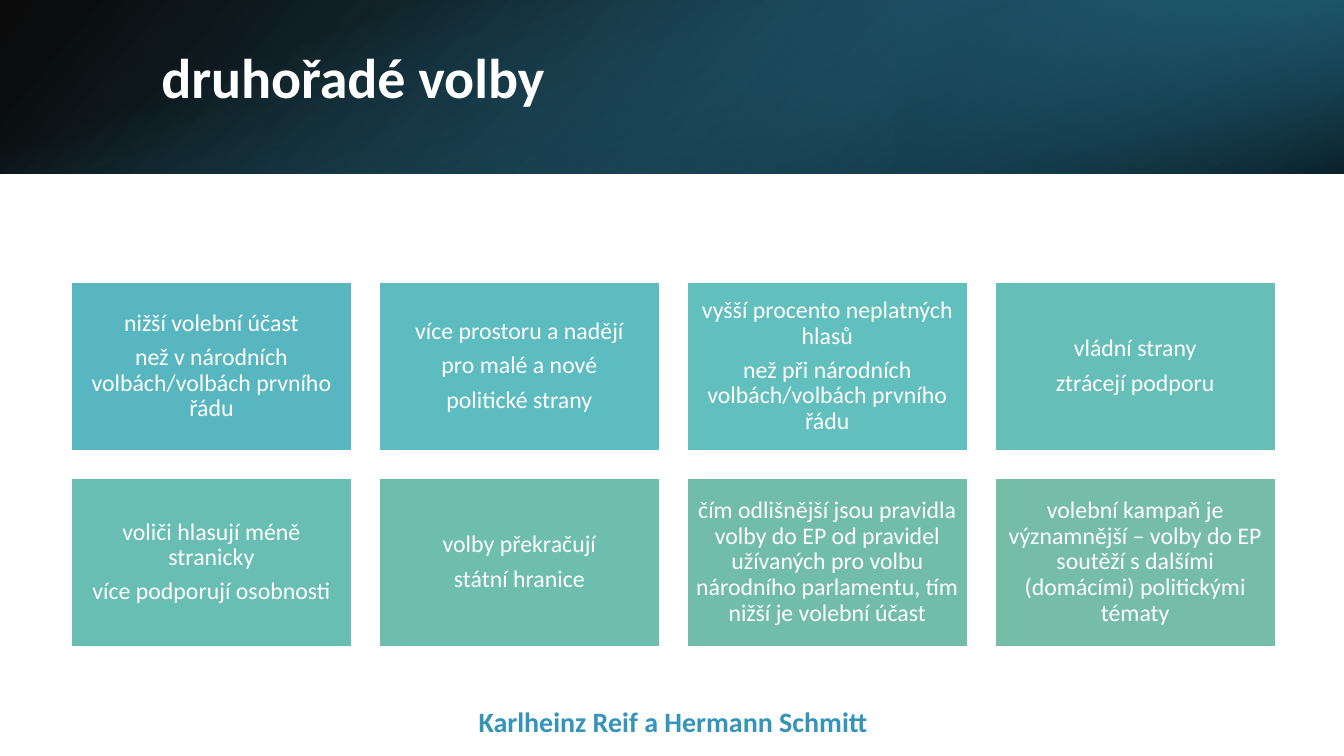
from dataclasses import dataclass

from lxml.etree import SubElement
from pptx import Presentation
from pptx.dml.color import RGBColor
from pptx.enum.shapes import MSO_SHAPE
from pptx.enum.text import MSO_ANCHOR, MSO_AUTO_SIZE, PP_ALIGN
from pptx.oxml.ns import qn
from pptx.shapes.autoshape import Shape
from pptx.slide import Slide
from pptx.util import Cm, Pt


@dataclass(frozen=True)
class Theme:
    """Colours, font and type sizes of the slide."""
    font: str = "Calibri"
    white: str = "FFFFFF"
    black: str = "000000"
    blue: str = "3494BA"
    steel: str = "276F8B"
    navy: str = "1A4A5D"
    title: int = 40
    card: int = 17
    credit: int = 20


@dataclass(frozen=True)
class Stop:
    """A gradient stop with position and opacity in percent."""
    place: int
    tint: str
    alpha: int


@dataclass(frozen=True)
class Band:
    """A gradient layer of the header, measured in centimetres."""
    left: float
    top: float
    width: float
    height: float
    turn: int
    flip: bool
    angle: int
    stops: tuple[Stop, Stop]


@dataclass(frozen=True)
class Card:
    """A coloured box with its lines of text."""
    fill: str
    lines: tuple[str, ...]


@dataclass(frozen=True)
class Grid:
    """The card grid, measured in centimetres."""
    left: float = 1.8
    top: float = 7.11
    width: float = 7.06
    height: float = 4.24
    gap: float = 0.7
    cols: int = 4
    inset: float = 0.18


THEME = Theme()
GRID = Grid()
WIDE, TALL, HEAD = 33.87, 19.05, 4.38
SIDE = (WIDE - HEAD) / 2

BANDS = (
    Band(0, 0, WIDE, HEAD, 0, True, 140,
         (Stop(0, THEME.black, 96), Stop(100, THEME.steel, 100))),
    Band(WIDE * 2 / 3, 0, WIDE / 3, HEAD, 180, True, 320,
         (Stop(19, THEME.navy, 68), Stop(100, THEME.blue, 79))),
    Band(SIDE, -SIDE, HEAD, WIDE, 90, False, 340,
         (Stop(23, THEME.blue, 0), Stop(99, THEME.black, 74))),
)

CARDS = (
    Card("58B6C0", ("nižší volební účast",
                    "než v národních volbách/volbách prvního řádu")),
    Card("5CBCBF", ("více prostoru a nadějí", "pro malé a nové",
                    "politické strany")),
    Card("61BFBD", ("vyšší procento neplatných hlasů",
                    "než při národních volbách/volbách prvního řádu")),
    Card("65BEB8", ("vládní strany", "ztrácejí podporu")),
    Card("69BEB3", ("voliči hlasují méně stranicky",
                    "více podporují osobnosti")),
    Card("6DBEAE", ("volby překračují", "státní hranice")),
    Card("71BDAA", ("čím odlišnější jsou pravidla volby do EP od pravidel "
                    "užívaných pro volbu národního parlamentu, "
                    "tím nižší je volební účast",)),
    Card("75BDA7", ("volební kampaň je významnější – volby do EP soutěží "
                    "s dalšími (domácími) politickými tématy",)),
)


def write(shape: Shape, lines: tuple[str, ...], size: int, tint: str,
          bold: bool = False, align: PP_ALIGN = PP_ALIGN.CENTER,
          after: int = 0) -> None:
    """Fill a shape with one styled run per paragraph."""
    frame = shape.text_frame
    frame.word_wrap = True
    frame.auto_size = MSO_AUTO_SIZE.NONE
    frame.vertical_anchor = MSO_ANCHOR.MIDDLE
    for i, line in enumerate(lines):
        para = frame.add_paragraph() if i else frame.paragraphs[0]
        para.alignment = align
        para.line_spacing = 0.9
        para.space_before = Pt(0)
        para.space_after = Pt(after)
        run = para.add_run()
        run.text = line
        run.font.name = THEME.font
        run.font.size = Pt(size)
        run.font.bold = bold
        run.font.color.rgb = RGBColor.from_string(tint)


def add_rect(slide: Slide, left: float, top: float, width: float,
             height: float) -> Shape:
    """Add a rectangle without a shadow."""
    rect = slide.shapes.add_shape(MSO_SHAPE.RECTANGLE, Cm(left), Cm(top),
                                  Cm(width), Cm(height))
    rect.shadow.inherit = False
    return rect


def add_band(slide: Slide, band: Band) -> None:
    """Add a gradient layer of the header."""
    rect = add_rect(slide, band.left, band.top, band.width, band.height)
    rect.line.fill.background()
    rect.rotation = band.turn
    if band.flip:
        rect._element.spPr.find(qn("a:xfrm")).set("flipH", "1")
    rect.fill.gradient()
    rect.fill.gradient_angle = 360 - band.angle
    for mark, stop in zip(rect.fill.gradient_stops, band.stops):
        mark.position = stop.place / 100
        mark.color.rgb = RGBColor.from_string(stop.tint)
    tints = rect._element.spPr.iter(qn("a:srgbClr"))
    for tint, stop in zip(list(tints), band.stops):
        SubElement(tint, qn("a:alpha")).set("val", str(stop.alpha * 1000))


def add_card(slide: Slide, index: int, card: Card) -> None:
    """Add a card at its place in the grid."""
    row, col = divmod(index, GRID.cols)
    rect = add_rect(slide, GRID.left + col * (GRID.width + GRID.gap),
                    GRID.top + row * (GRID.height + GRID.gap),
                    GRID.width, GRID.height)
    rect.fill.solid()
    rect.fill.fore_color.rgb = RGBColor.from_string(card.fill)
    rect.line.color.rgb = RGBColor.from_string(THEME.white)
    rect.line.width = Pt(1)
    frame = rect.text_frame
    frame.margin_left = frame.margin_right = Cm(GRID.inset)
    frame.margin_top = frame.margin_bottom = Cm(GRID.inset)
    write(rect, card.lines, THEME.card, THEME.white, after=6)


def main() -> None:
    """Build and save the slide."""
    deck = Presentation()
    deck.slide_width, deck.slide_height = Cm(WIDE), Cm(TALL)
    slide = deck.slides.add_slide(deck.slide_layouts[5])
    for band in BANDS:
        add_band(slide, band)
    title = slide.shapes.title
    title.left, title.top = Cm(3.81), Cm(0.81)
    title.width, title.height = Cm(27.89), Cm(2.44)
    write(title, ("druhořadé volby",), THEME.title, THEME.white, True,
          PP_ALIGN.LEFT)
    slide.shapes._spTree.append(title._element)
    for index, card in enumerate(CARDS):
        add_card(slide, index, card)
    credit = slide.shapes.add_textbox(Cm(10.31), Cm(16.99), Cm(13.31),
                                      Cm(2.46))
    write(credit, ("Karlheinz Reif a Hermann Schmitt",), THEME.credit,
          THEME.blue, True)
    deck.save("out.pptx")


if __name__ == "__main__":
    main()
